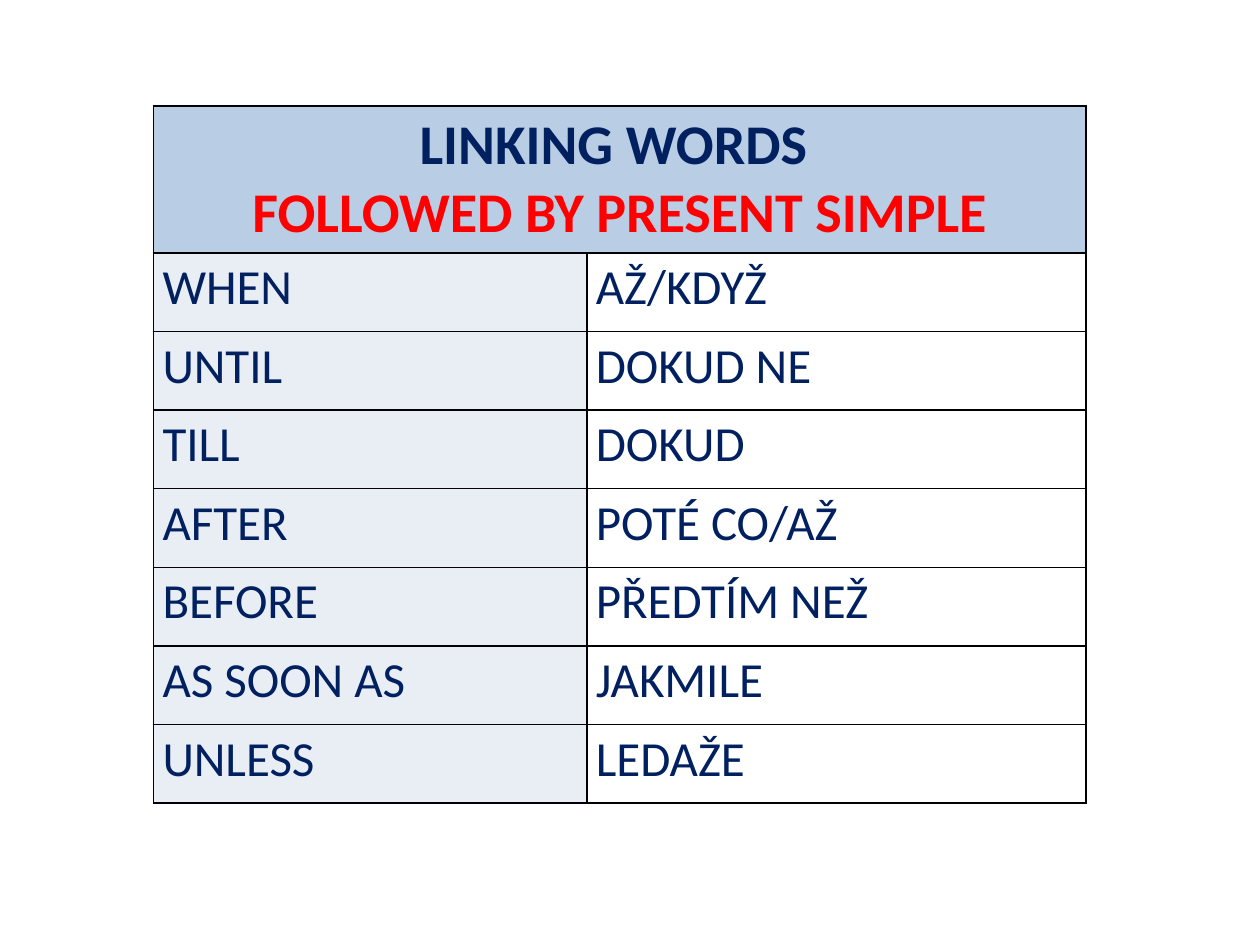
import dataclasses

import pptx
import pptx.dml.color
import pptx.enum.text
import pptx.oxml
import pptx.oxml.ns
import pptx.util
from pptx.util import Inches


@dataclasses.dataclass(frozen=True)
class Theme:
    font: str = "Calibri"
    heading_size: int = 32
    word_size: int = 28
    navy: str = "002060"
    red: str = "FF0000"
    heading_fill: str = "B9CDE5"
    english_fill: str = "E9EDF4"
    czech_fill: str = "FFFFFF"
    border: str = "000000"
    border_width: int = 1


THEME = Theme()

HEADING = [("LINKING WORDS ", THEME.navy), ("FOLLOWED BY PRESENT SIMPLE", THEME.red)]
LINKING_WORDS = [
    ("WHEN", "AŽ/KDYŽ"),
    ("UNTIL", "DOKUD NE"),
    ("TILL", "DOKUD"),
    ("AFTER", "POTÉ CO/AŽ"),
    ("BEFORE", "PŘEDTÍM NEŽ"),
    ("AS SOON AS", "JAKMILE"),
    ("UNLESS", "LEDAŽE"),
]


def rgb(color):
    return pptx.dml.color.RGBColor.from_string(color)


def add_run(paragraph, text, size, color, bold=False):
    run = paragraph.add_run()
    run.text = text
    run.font.name = THEME.font
    run.font.size = pptx.util.Pt(size)
    run.font.bold = bold
    run.font.color.rgb = rgb(color)


def style_cell(cell, fill):
    """Set the margins, the borders and the fill of one cell."""
    cell.margin_left = cell.margin_right = Inches(0.07)
    cell.margin_top = cell.margin_bottom = Inches(0.04)
    properties = cell._tc.get_or_add_tcPr()
    # Borders come before the fill in the cell properties
    for side in ("lnL", "lnR", "lnT", "lnB"):
        properties.append(pptx.oxml.parse_xml(
            f'<a:{side} {pptx.oxml.ns.nsdecls("a")} w="{pptx.util.Pt(THEME.border_width)}">'
            f'<a:solidFill><a:srgbClr val="{THEME.border}"/></a:solidFill></a:{side}>'))
    cell.fill.solid()
    cell.fill.fore_color.rgb = rgb(fill)


def add_linking_words(slide, left, top, width, height):
    """Place the table of linking words in the given box."""
    table = slide.shapes.add_table(
        len(LINKING_WORDS) + 1, 2, left, top, width, height).table
    table.horz_banding = False

    # Column widths and row heights
    english_width = Inches(3.44)
    table.columns[0].width = english_width
    table.columns[1].width = width - english_width
    heading_row, *word_rows = table.rows
    heading_row.height = Inches(1.14)
    for row in word_rows:
        row.height = (height - heading_row.height) // len(word_rows)

    # Heading across both columns
    heading = table.cell(0, 0)
    heading.merge(table.cell(0, 1))
    for cell in heading_row.cells:
        style_cell(cell, THEME.heading_fill)
    frame = heading.text_frame
    for index, (text, color) in enumerate(HEADING):
        line = frame.add_paragraph() if index else frame.paragraphs[0]
        line.alignment = pptx.enum.text.PP_ALIGN.CENTER
        add_run(line, text, THEME.heading_size, color, bold=True)

    # English words with their Czech meanings
    fills = (THEME.english_fill, THEME.czech_fill)
    for row, words in zip(word_rows, LINKING_WORDS):
        for cell, word, fill in zip(row.cells, words, fills):
            style_cell(cell, fill)
            add_run(cell.text_frame.paragraphs[0], word, THEME.word_size, THEME.navy)


def main():
    presentation = pptx.Presentation()
    presentation.slide_width = Inches(10)
    presentation.slide_height = Inches(7.5)
    slide = presentation.slides.add_slide(presentation.slide_layouts[6])
    add_linking_words(slide, Inches(1.22), Inches(0.84), Inches(7.4), Inches(5.51))
    presentation.save("out.pptx")


if __name__ == "__main__":
    main()
